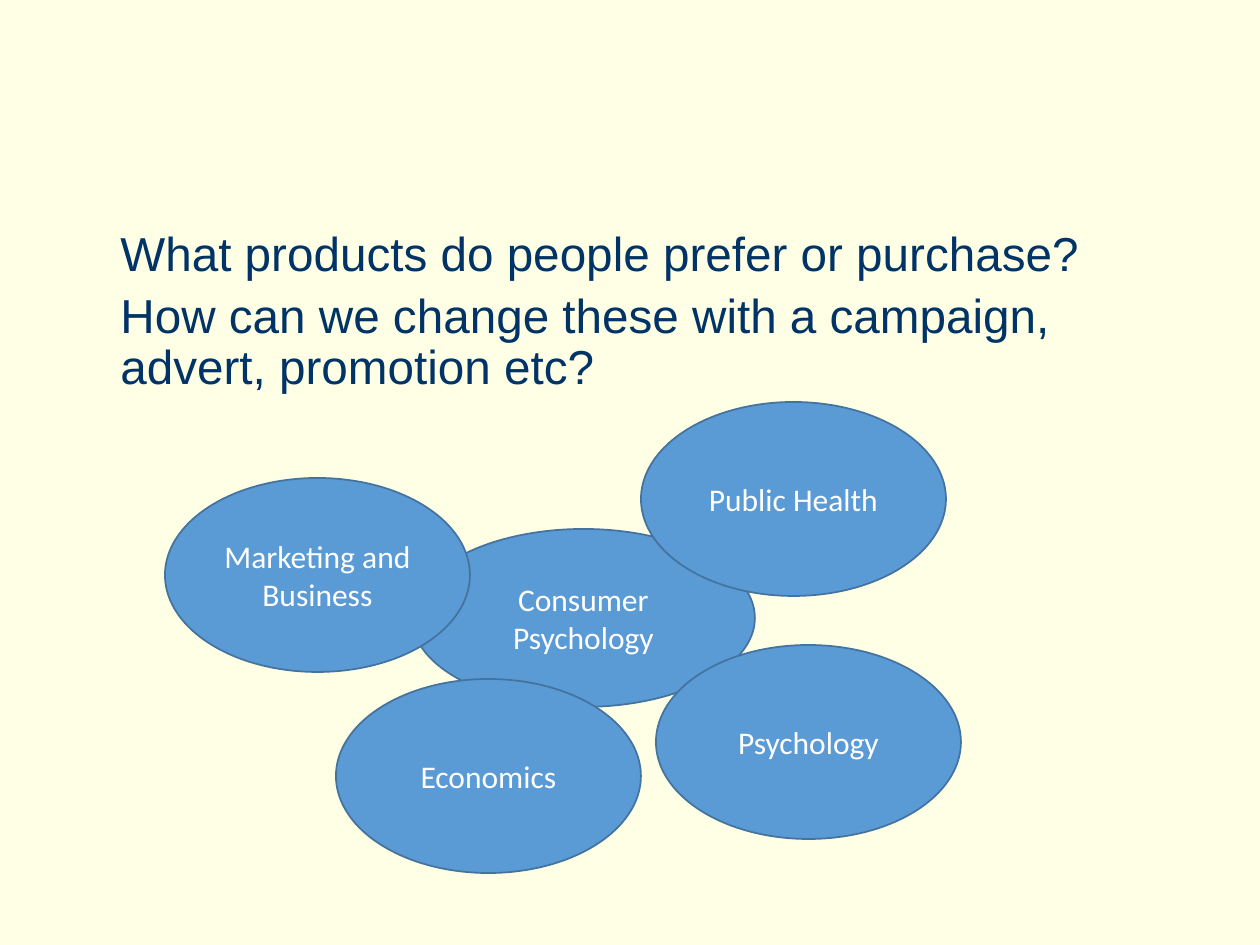
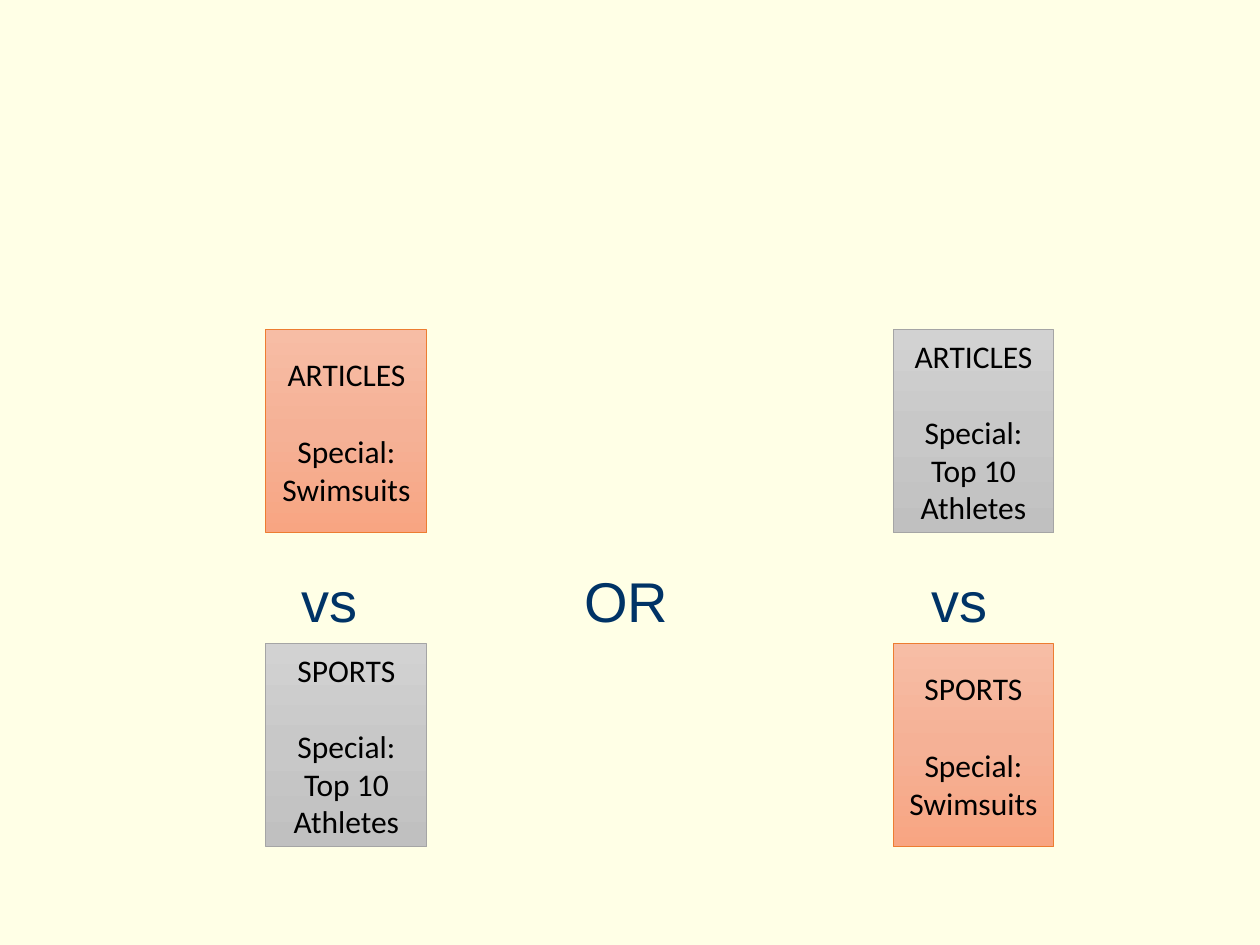
import copy

import pptx
import pptx.dml.color
import pptx.enum.shapes
import pptx.enum.text
import pptx.oxml
import pptx.oxml.ns
import pptx.util

RGBColor = pptx.dml.color.RGBColor
MSO_SHAPE = pptx.enum.shapes.MSO_SHAPE
PP_ALIGN = pptx.enum.text.PP_ALIGN
MSO_ANCHOR = pptx.enum.text.MSO_ANCHOR

CREAM = RGBColor(0xFF, 0xFF, 0xE6)
NAVY = RGBColor(0x00, 0x33, 0x66)
WHITE = RGBColor(0xFF, 0xFF, 0xFF)
BLACK = RGBColor(0x00, 0x00, 0x00)
BLUE = RGBColor(0x5B, 0x9B, 0xD5)
BLUE_EDGE = RGBColor(0x43, 0x73, 0x9E)
ORANGE_EDGE = RGBColor(0xED, 0x7D, 0x31)
ORANGE_FADE = [RGBColor(0xF7, 0xBD, 0xA5), RGBColor(0xF5, 0xB1, 0x96), RGBColor(0xF8, 0xA5, 0x82)]
GREY_EDGE = RGBColor(0xA5, 0xA5, 0xA5)
GREY_FADE = [RGBColor(0xD2, 0xD2, 0xD2), RGBColor(0xC8, 0xC8, 0xC8), RGBColor(0xC0, 0xC0, 0xC0)]

PX_PER_INCH = 126


def px(length):
    return pptx.util.Emu(round(length * 914400 / PX_PER_INCH))


class Deck:
    text_font = "Arial"
    label_font = "Calibri"
    label_size = 18

    def __init__(self):
        self.prs = pptx.Presentation()
        self.prs.slide_width = px(1260)
        self.prs.slide_height = px(945)
        self.slide = None

    def new_slide(self):
        self.slide = self.prs.slides.add_slide(self.prs.slide_layouts[6])
        background = self.slide.background.fill
        background.solid()
        background.fore_color.rgb = CREAM

    def add_words(self, paragraph, text, font, size, color):
        run = paragraph.add_run()
        run.text = text
        run.font.name = font
        run.font.size = pptx.util.Pt(size)
        run.font.color.rgb = color

    def paragraphs(self, frame, count):
        return [frame.paragraphs[0]] + [frame.add_paragraph() for _ in range(count - 1)]

    def text(self, left, top, width, height, lines, size, tabs=()):
        frame = self.slide.shapes.add_textbox(px(left), px(top), px(width), px(height)).text_frame
        frame.word_wrap = True
        for index, paragraph in enumerate(self.paragraphs(frame, len(lines))):
            if tabs:
                tab_list = pptx.oxml.parse_xml(f'<a:tabLst {pptx.oxml.ns.nsdecls("a")}/>')
                for stop in tabs:
                    tab = tab_list.makeelement(pptx.oxml.ns.qn("a:tab"), {"pos": str(px(stop)), "algn": "ctr"})
                    tab_list.append(tab)
                paragraph._p.get_or_add_pPr().append(tab_list)
            else:
                paragraph.line_spacing = 0.9
            if index:
                paragraph.space_before = pptx.util.Pt(6)
            self.add_words(paragraph, lines[index], self.text_font, size, NAVY)

    def label(self, kind, left, top, width, height, lines, color, edge, edge_width, heading_gap=0):
        shape = self.slide.shapes.add_shape(kind, px(left), px(top), px(width), px(height))
        shape.shadow.inherit = False
        shape.line.color.rgb = edge
        shape.line.width = pptx.util.Pt(edge_width)
        frame = shape.text_frame
        frame.word_wrap = True
        frame.vertical_anchor = MSO_ANCHOR.MIDDLE
        paragraphs = self.paragraphs(frame, len(lines))
        for paragraph, line in zip(paragraphs, lines):
            paragraph.alignment = PP_ALIGN.CENTER
            self.add_words(paragraph, line, self.label_font, self.label_size, color)
        if heading_gap:
            paragraphs[0].space_after = pptx.util.Pt(heading_gap)
        return shape

    def field(self, left, top, width, height, name):
        ellipse = self.label(MSO_SHAPE.OVAL, left, top, width, height, [name], WHITE, BLUE_EDGE, 1)
        ellipse.fill.solid()
        ellipse.fill.fore_color.rgb = BLUE

    def magazine(self, left, top, lines, fade, edge):
        cover = self.label(MSO_SHAPE.RECTANGLE, left, top, 161, 203, lines, BLACK, edge, 0.5, heading_gap=22)
        cover.fill.gradient()
        cover.fill.gradient_angle = 270
        stop_list = cover.element.spPr.find(".//" + pptx.oxml.ns.qn("a:gsLst"))
        stop_list.insert(1, copy.deepcopy(stop_list[0]))
        for stop, color, position in zip(cover.fill.gradient_stops, fade, (0, 0.5, 1)):
            stop.color.rgb = color
            stop.position = position


def build_fields(deck):
    deck.new_slide()
    questions = [
        "What products do people prefer or purchase?",
        "How can we change these with a campaign, advert, promotion etc?",
    ]
    deck.text(108, 224, 1065, 194, questions, 27.2)
    deck.field(412, 529, 343, 178, "Consumer Psychology")
    for left, top, name in [
        (165, 478, "Marketing and Business"),
        (336, 679, "Economics"),
        (656, 645, "Psychology"),
        (641, 402, "Public Health"),
    ]:
        deck.field(left, top, 305, 194, name)


def build_choices(deck):
    deck.new_slide()
    deck.text(117, 560, 1056, 77, ["\tvs\tOR\tvs"], 32, tabs=(200, 497, 830))
    swimsuits = (["Special:", "Swimsuits"], ORANGE_FADE, ORANGE_EDGE)
    athletes = (["Special:", "Top 10 Athletes"], GREY_FADE, GREY_EDGE)
    for left, pair in [(266, (swimsuits, athletes)), (893, (athletes, swimsuits))]:
        for top, heading, (special, fade, edge) in zip((330, 644), ("ARTICLES", "SPORTS"), pair):
            deck.magazine(left, top, [heading] + special, fade, edge)


def main():
    deck = Deck()
    build_fields(deck)
    build_choices(deck)
    deck.prs.save("out.pptx")


if __name__ == "__main__":
    main()
